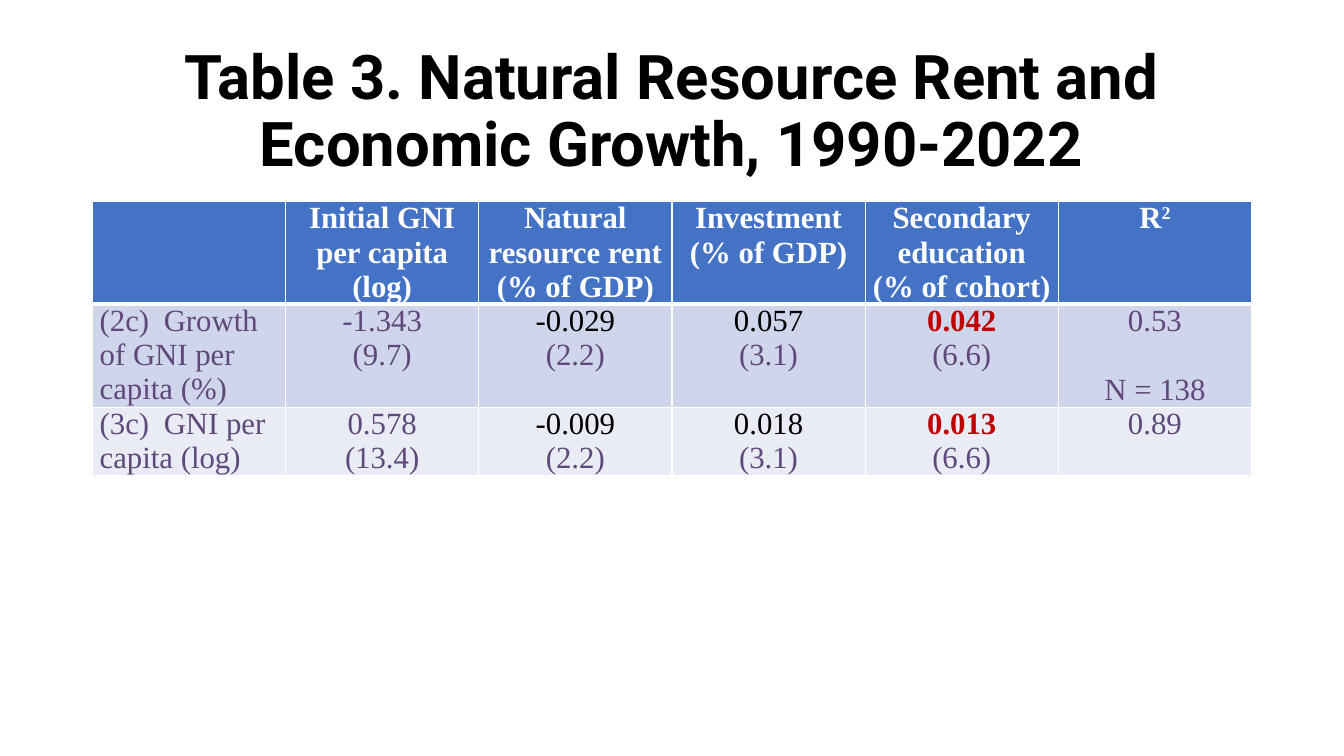
from lxml.etree import SubElement
from pptx import Presentation
from pptx.dml.color import RGBColor
from pptx.enum.text import MSO_ANCHOR as Anchor, MSO_AUTO_SIZE as AutoSize, PP_ALIGN as Align
from pptx.oxml.ns import qn
from pptx.util import Pt

EMU_PER_PX = 9525
WHITE, BLACK, PURPLE, RED = "FFFFFF", "000000", "5F497A", "C00000"
ROW_FILLS = ["4472C4", "CFD5EA", "E9EBF5"]
ROW_HEIGHTS = [97, 97, 65]
COLUMN_WIDTH = 184
LABEL_TAB = 61
BLANK_LINE = 25
HEADERS = [
    [],
    ["Initial GNI per capita (log)"],
    ["Natural resource rent (% of GDP)"],
    ["Investment (% of GDP)"],
    ["Secondary education", "(% of cohort)"],
]
ESTIMATE_COLORS = [PURPLE, BLACK, BLACK, RED]
MODELS = [
    ("(2c)\tGrowth of GNI per capita (%)",
     [("-1.343", "(9.7)"), ("-0.029", "(2.2)"), ("0.057", "(3.1)"), ("0.042", "(6.6)")],
     ["0.53", "N = 138"]),
    ("(3c)\tGNI per capita (log)",
     [("0.578", "(13.4)"), ("-0.009", "(2.2)"), ("0.018", "(3.1)"), ("0.013", "(6.6)")],
     ["0.89"]),
]


def px(length):
    return length * EMU_PER_PX


def rgb(value):
    return RGBColor.from_string(value)


def add_span(para, text, size, font, color, bold=False):
    span = para.add_run()
    span.text = text
    span.font.size = Pt(size)
    span.font.name = font
    span.font.bold = bold
    span.font.color.rgb = rgb(color)
    return span


def add_title(page, text):
    box = page.shapes.title
    box.left, box.top, box.width, box.height = px(88), px(38), px(1104), px(139)
    frame = box.text_frame
    frame.word_wrap = True
    frame.auto_size = AutoSize.NONE
    frame.vertical_anchor = Anchor.MIDDLE
    para = frame.paragraphs[0]
    para.alignment = Align.CENTER
    para.line_spacing = 0.9
    add_span(para, text, 44, "Roboto", BLACK, True)


def add_line(cell, index, text, color, bold=False, align=Align.CENTER):
    frame = cell.text_frame
    para = frame.add_paragraph() if index else frame.paragraphs[0]
    para.alignment = align
    add_span(para, text, 22, "Times New Roman", color, bold)
    return para


def set_border(cell, side, width):
    line = SubElement(cell._tc.get_or_add_tcPr(), qn(f"a:ln{side}"), w=str(Pt(width)))
    fill = SubElement(line, qn("a:solidFill"))
    SubElement(fill, qn("a:srgbClr"), val=WHITE)


def style_cell(cell, row):
    cell.margin_left = cell.margin_right = px(7)
    cell.margin_top = cell.margin_bottom = 0
    for side in "LRTB":
        thick = (row, side) in [(0, "B"), (1, "T")]
        set_border(cell, side, 3 if thick else 1)
    cell.fill.solid()
    cell.fill.fore_color.rgb = rgb(ROW_FILLS[row])


def fill_header(table):
    for column, lines in enumerate(HEADERS):
        for index, text in enumerate(lines):
            add_line(table.cell(0, column), index, text, WHITE, True)
    para = add_line(table.cell(0, len(HEADERS)), 0, "R", WHITE, True)
    power = add_span(para, "2", 22, "Times New Roman", WHITE, True)
    power._r.get_or_add_rPr().set("baseline", "30000")


def fill_model(table, row, label, estimates, fit):
    para = add_line(table.cell(row, 0), 0, label, PURPLE, align=Align.LEFT)
    stops = SubElement(para._p.get_or_add_pPr(), qn("a:tabLst"))
    SubElement(stops, qn("a:tab"), pos=str(px(LABEL_TAB)), algn="l")
    for column, (estimate, ratio) in enumerate(estimates, 1):
        cell = table.cell(row, column)
        color = ESTIMATE_COLORS[column - 1]
        add_line(cell, 0, estimate, color, color == RED)
        add_line(cell, 1, ratio, PURPLE)
    for index, text in enumerate(fit):
        para = add_line(table.cell(row, len(HEADERS)), index, text, PURPLE)
        if index:
            para.space_before = Pt(BLANK_LINE)


def add_results(page):
    columns = len(HEADERS) + 1
    table = page.shapes.add_table(
        len(ROW_HEIGHTS), columns, px(88), px(192),
        px(COLUMN_WIDTH * columns), px(sum(ROW_HEIGHTS))).table
    for column in table.columns:
        column.width = px(COLUMN_WIDTH)
    for row, height in enumerate(ROW_HEIGHTS):
        table.rows[row].height = px(height)
        for cell in table.rows[row].cells:
            style_cell(cell, row)
    fill_header(table)
    for row, model in enumerate(MODELS, 1):
        fill_model(table, row, *model)


def main():
    deck = Presentation()
    deck.slide_width, deck.slide_height = px(1280), px(720)
    page = deck.slides.add_slide(deck.slide_layouts[5])
    add_title(page, "Table 3. Natural Resource Rent and Economic Growth, 1990-2022")
    add_results(page)
    deck.save("out.pptx")


if __name__ == "__main__":
    main()
